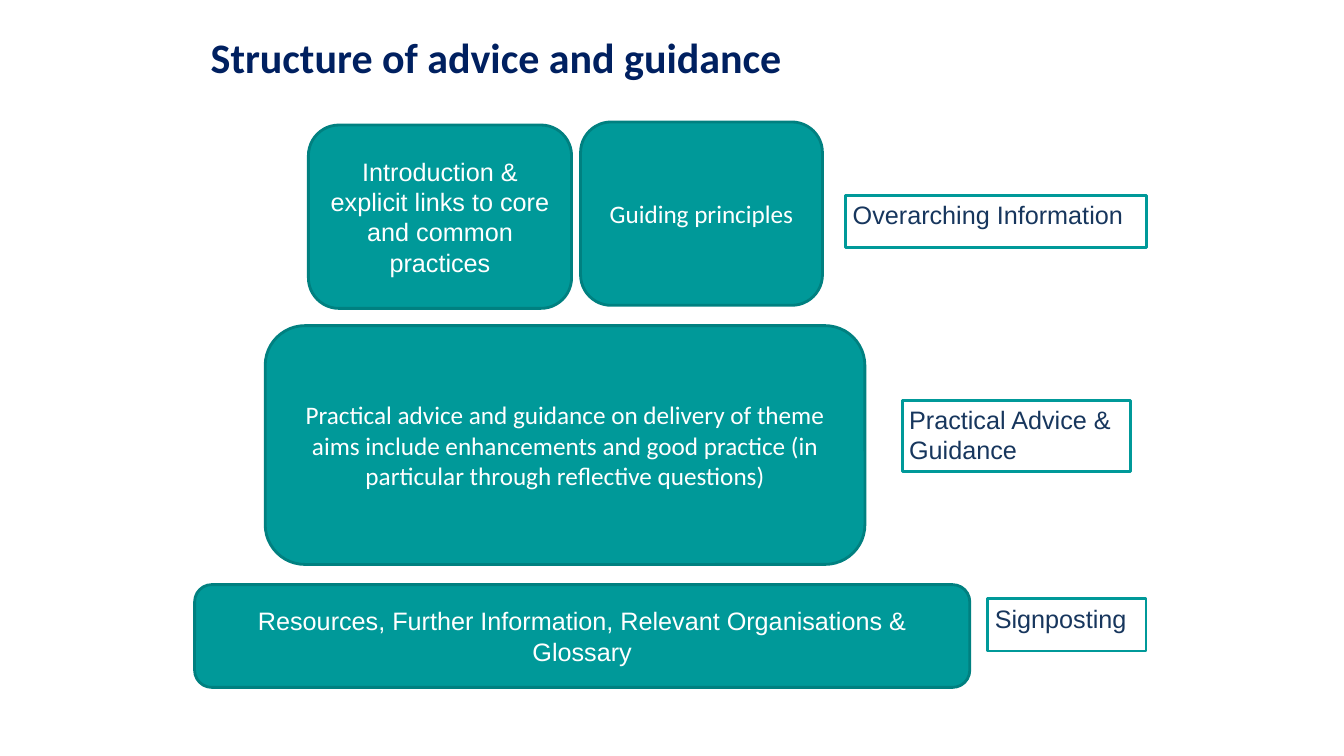
from pptx import Presentation
from pptx.dml.color import RGBColor
from pptx.enum.shapes import MSO_SHAPE
from pptx.enum.text import MSO_ANCHOR, MSO_AUTO_SIZE, PP_ALIGN
from pptx.util import Pt

ROUND, RECT = MSO_SHAPE.ROUNDED_RECTANGLE, MSO_SHAPE.RECTANGLE
TOP, MIDDLE = MSO_ANCHOR.TOP, MSO_ANCHOR.MIDDLE
LEFT, CENTER = PP_ALIGN.LEFT, PP_ALIGN.CENTER
GROW = MSO_AUTO_SIZE.SHAPE_TO_FIT_TEXT
TEAL, EDGE, WHITE, INK, NAVY = "009999", "008080", "FFFFFF", "17365D", "002060"

BLOCKS = [
    ("Introduction & explicit links to core and common practices",
     (220.3, 89.3, 188, 131), "Arial"),
    ("Guiding principles", (414.7, 87.1, 172.8, 131), "Calibri"),
    ("Practical advice and guidance on delivery of theme aims include "
     "enhancements and good practice (in particular through reflective questions)",
     (189.4, 232.6, 428.4, 170.6), "Calibri"),
    ("Resources, Further Information, Relevant Organisations & Glossary",
     (139, 417.6, 553.7, 73.4), "Arial"),
]
LABELS = [
    ("Overarching Information", (604.1, 139.7, 214.6, 37.4)),
    ("Practical Advice & Guidance", (644.4, 285.8, 163.4, 51.1)),
    ("Signposting", (705.6, 427.7, 113, 37.4)),
]


def color(code):
    return RGBColor.from_string(code)


class Page:
    size = 18
    inset = (5, 3)

    def __init__(self, deck):
        self.slide = deck.slides.add_slide(deck.slide_layouts[5])

    def set_text(self, frame, text, font, ink, size, align, anchor):
        frame.word_wrap = True
        frame.vertical_anchor = anchor
        frame.text = text
        para = frame.paragraphs[0]
        para.alignment = align
        para.font.name = font
        para.font.size = Pt(size)
        para.font.color.rgb = color(ink)
        return para

    def title(self, text, box):
        shape = self.slide.shapes.title
        shape.left, shape.top, shape.width, shape.height = map(Pt, box)
        para = self.set_text(shape.text_frame, text, "Calibri", NAVY, 30, LEFT, TOP)
        para.font.bold = True
        shape.text_frame.auto_size = GROW

    def panel(self, kind, text, box, fill, line, font, ink, align, anchor):
        shape = self.slide.shapes.add_shape(kind, *map(Pt, box))
        shape.shadow.inherit = False
        shape.fill.solid()
        shape.fill.fore_color.rgb = color(fill)
        shape.line.color.rgb = color(line)
        shape.line.width = Pt(2)
        frame = shape.text_frame
        side, edge = map(Pt, self.inset)
        frame.margin_left = frame.margin_right = side
        frame.margin_top = frame.margin_bottom = edge
        self.set_text(frame, text, font, ink, self.size, align, anchor)

    def block(self, text, box, font):
        self.panel(ROUND, text, box, TEAL, EDGE, font, WHITE, CENTER, MIDDLE)

    def label(self, text, box):
        self.panel(RECT, text, box, WHITE, TEAL, "Arial", INK, LEFT, TOP)


def main():
    deck = Presentation()
    deck.slide_width, deck.slide_height = Pt(960), Pt(540)
    page = Page(deck)
    page.title("Structure of advice and guidance", (143.3, 18.7, 602, 44))
    for block in BLOCKS:
        page.block(*block)
    for label in LABELS:
        page.label(*label)
    deck.save("out.pptx")


if __name__ == "__main__":
    main()
